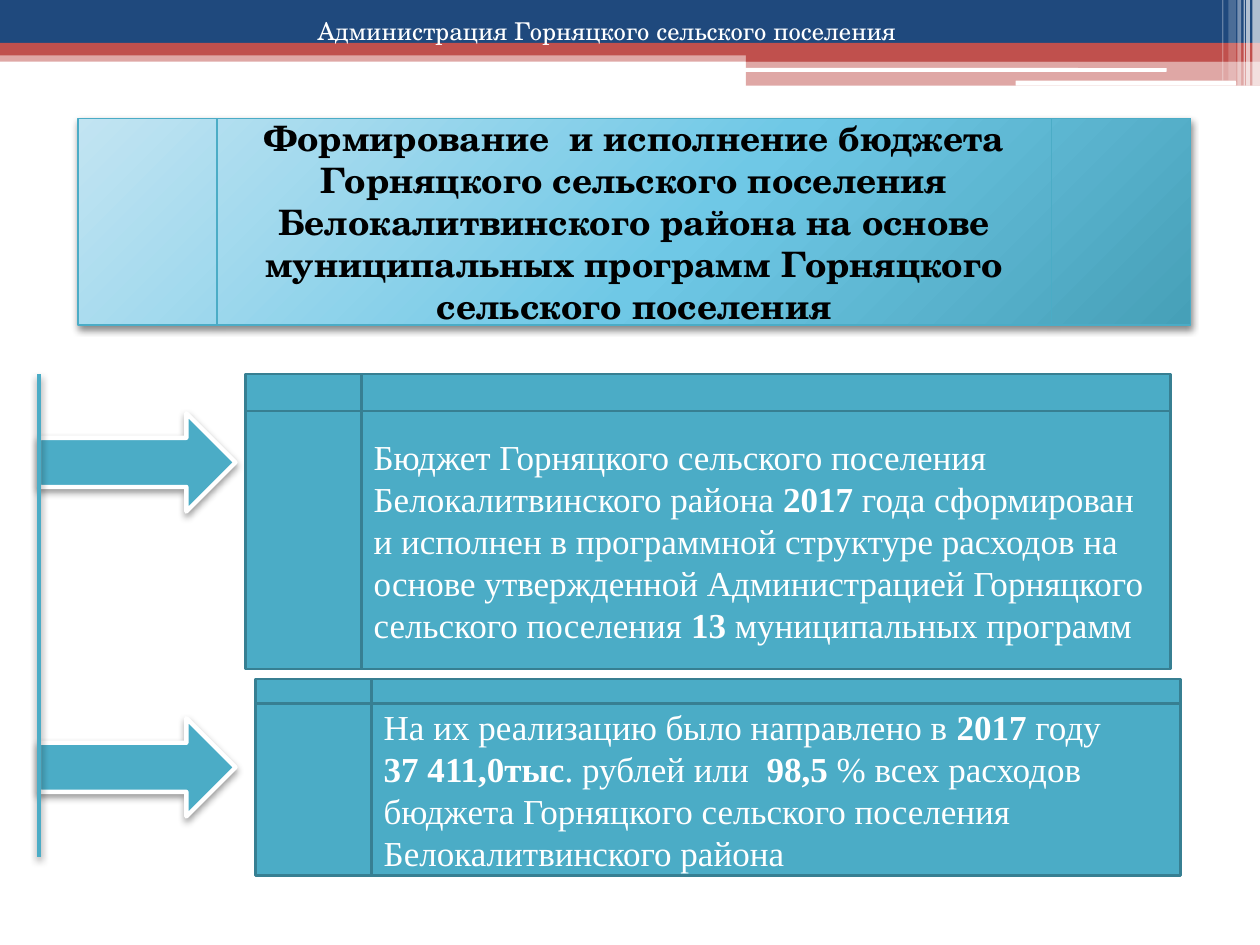
from dataclasses import dataclass
from typing import Optional

import pptx
import pptx.dml.color
import pptx.enum.shapes
import pptx.enum.text
import pptx.oxml
import pptx.oxml.ns
import pptx.util
from pptx.util import Inches

Geometry = pptx.enum.shapes.MSO_SHAPE
Align = pptx.enum.text.PP_ALIGN

COLOURS = {
    "navy": "1F497D", "red": "C0504D", "white": "FFFFFF", "black": "000000",
    "teal": "4BACC6", "teal_edge": "377F92",
    "sky_light": "C2E4F2", "sky": "6FC8E6", "sky_dark": "46A0B8",
}
HEADING_FONT = "TeX Gyre Schola"
BODY_FONT = "Times New Roman"


@dataclass(frozen=True)
class Box:
    left: float
    top: float
    width: float
    height: float

    def lengths(self) -> tuple:
        return tuple(Inches(v) for v in (self.left, self.top, self.width, self.height))


@dataclass(frozen=True)
class Stripe:
    box: Box
    colour: str
    opacity: int = 100
    geometry: Geometry = Geometry.RECTANGLE


@dataclass(frozen=True)
class Statement:
    box: Box
    arrow_top: float
    paragraphs: tuple  # each paragraph is a tuple of (text, bold)


def rgb(name: str) -> pptx.dml.color.RGBColor:
    return pptx.dml.color.RGBColor.from_string(COLOURS[name])


def xml(markup: str):
    """Parse a drawing element given without its namespace."""
    tag, rest = markup[1:].split(">", 1)
    return pptx.oxml.parse_xml(f"<{tag} {pptx.oxml.ns.nsdecls('a')}>{rest}")


def set_line(line, colour: str, width: float) -> None:
    line.color.rgb = rgb(colour)
    line.width = pptx.util.Pt(width)


def add_shape(slide, geometry: Geometry, box: Box, fill: str,
              line: Optional[str] = None, width: float = 0):
    shape = slide.shapes.add_shape(geometry, *box.lengths())
    shape.shadow.inherit = False
    shape.fill.solid()
    shape.fill.fore_color.rgb = rgb(fill)
    if line:
        set_line(shape.line, line, width)
    else:
        shape.line.fill.background()
    return shape


def add_stripe(slide, stripe: Stripe) -> None:
    shape = add_shape(slide, stripe.geometry, stripe.box, stripe.colour)
    if stripe.opacity < 100:
        colour = shape._element.spPr.find(".//" + pptx.oxml.ns.qn("a:srgbClr"))
        colour.append(xml(f'<a:alpha val="{stripe.opacity * 1000}"></a:alpha>'))


def cast_shadow(shape, opacity: int, blur: float) -> None:
    properties = shape._element.spPr
    for empty in properties.findall(pptx.oxml.ns.qn("a:effectLst")):
        properties.remove(empty)
    properties.append(xml(
        f'<a:effectLst><a:outerShdw blurRad="{pptx.util.Pt(blur)}" dist="{pptx.util.Pt(2)}" '
        f'dir="5400000" rotWithShape="0"><a:srgbClr val="{COLOURS["black"]}">'
        f'<a:alpha val="{opacity * 1000}"/></a:srgbClr></a:outerShdw></a:effectLst>'))


def fill_with_glow(shape) -> None:
    stops = "".join(
        f'<a:gs pos="{position * 1000}"><a:srgbClr val="{COLOURS[name]}"/></a:gs>'
        for position, name in ((0, "sky_light"), (55, "sky"), (100, "sky_dark")))
    solid = shape._element.spPr.find(pptx.oxml.ns.qn("a:solidFill"))
    solid.getparent().replace(solid, xml(
        f'<a:gradFill rotWithShape="1"><a:gsLst>{stops}</a:gsLst><a:path path="circle">'
        '<a:fillToRect l="-40000" t="-90000" r="140000" b="190000"/></a:path></a:gradFill>'))


def write(shape, paragraphs: tuple, font: str, size: float, colour: str, align: Align) -> None:
    frame = shape.text_frame
    frame_format = {"word_wrap": True, "auto_size": pptx.enum.text.MSO_AUTO_SIZE.NONE,
                    "vertical_anchor": pptx.enum.text.MSO_ANCHOR.MIDDLE}
    for attribute, value in frame_format.items():
        setattr(frame, attribute, value)
    for index, runs in enumerate(paragraphs):
        paragraph = frame.add_paragraph() if index else frame.paragraphs[0]
        paragraph.alignment = align
        for text, bold in runs:
            run = paragraph.add_run()
            run.text = text
            font_format = {"name": font, "size": pptx.util.Pt(size), "bold": bold}
            for attribute, value in font_format.items():
                setattr(run.font, attribute, value)
            run.font.color.rgb = rgb(colour)


def add_statement(slide, statement: Statement) -> None:
    arrow = add_shape(slide, Geometry.RIGHT_ARROW, Box(0.31, statement.arrow_top, 1.56, 0.78),
                      "teal", "white", 2.5)
    cast_shadow(arrow, 40, 4.1)
    panel = add_shape(slide, Geometry.FLOWCHART_INTERNAL_STORAGE, statement.box,
                      "teal", "teal_edge", 1.5)
    write(panel, statement.paragraphs, BODY_FONT, 20, "white", Align.LEFT)


STRIPES = [
    Stripe(Box(0, 0.4, 10, 0.09), "red", 50),
    Stripe(Box(0, 0, 10, 0.34), "navy"),
    Stripe(Box(0, 0.34, 10, 0.1), "red"),
    Stripe(Box(5.92, 0.39, 4.08, 0.1), "red"),
    Stripe(Box(5.92, 0.48, 4.08, 0.2), "red", 50),
    Stripe(Box(5.91, 0.54, 3.35, 0.03), "white", geometry=Geometry.ROUNDED_RECTANGLE),
    Stripe(Box(8.06, 0.64, 1.75, 0.04), "white", geometry=Geometry.ROUNDED_RECTANGLE),
] + [
    Stripe(Box(left, 0, width, height), "white", opacity)
    for left, width, height, opacity in (
        (9.94, 0.06, 0.68, 65), (9.89, 0.03, 0.68, 65), (9.87, 0.01, 0.68, 60),
        (9.82, 0.03, 0.68, 40), (9.75, 0.06, 0.64, 20), (9.7, 0.01, 0.64, 30))
]

STATEMENTS = [
    Statement(Box(1.95, 2.97, 7.34, 2.34), 3.28, (
        (("Бюджет Горняцкого сельского поселения Белокалитвинского района ", False),
         ("2017", True),
         (" года сформирован и исполнен в программной структуре расходов на основе "
          "утвержденной Администрацией Горняцкого сельского поселения ", False),
         ("13 ", True), ("муниципальных программ", False)),)),
    Statement(Box(2.03, 5.39, 7.34, 1.56), 5.7, (
        (("На их реализацию было направлено в ", False), ("2017", True), (" году", False)),
        (("37 411,0тыс", True), (". рублей или  ", False), ("98,5 ", True),
         ("% всех расходов  бюджета Горняцкого сельского поселения "
          "Белокалитвинского района", False)))),
]


def main() -> None:
    deck = pptx.Presentation()
    deck.slide_width, deck.slide_height = Inches(10), Inches(7.5)
    slide = deck.slides.add_slide(deck.slide_layouts[5])

    # Header band, with the title brought in front of it
    for stripe in STRIPES:
        add_stripe(slide, stripe)
    title = slide.shapes.title
    title.left, title.top, title.width, title.height = Box(2.42, -0.23, 12.36, 0.94).lengths()
    write(title, ((("Администрация Горняцкого сельского поселения", False),),),
          HEADING_FONT, 14, "white", Align.LEFT)
    slide.shapes._spTree.append(title._element)

    # Topic banner
    banner = add_shape(slide, Geometry.FLOWCHART_PREDEFINED_PROCESS,
                       Box(0.62, 0.94, 8.83, 1.64), "sky", "teal", 0.75)
    fill_with_glow(banner)
    cast_shadow(banner, 45, 4)
    topic = ("Формирование  и исполнение бюджета Горняцкого сельского поселения "
             "Белокалитвинского района на основе муниципальных программ "
             "Горняцкого сельского поселения")
    write(banner, (((topic, True),),), HEADING_FONT, 20, "black", Align.CENTER)

    # Statements with their arrows, joined by a vertical trunk
    for statement in STATEMENTS:
        add_statement(slide, statement)
    trunk = slide.shapes.add_connector(pptx.enum.shapes.MSO_CONNECTOR.STRAIGHT,
                                       Inches(0.31), Inches(2.97), Inches(0.31), Inches(6.8))
    set_line(trunk.line, "teal", 2.5)
    cast_shadow(trunk, 45, 4)

    deck.save("out.pptx")


if __name__ == "__main__":
    main()
